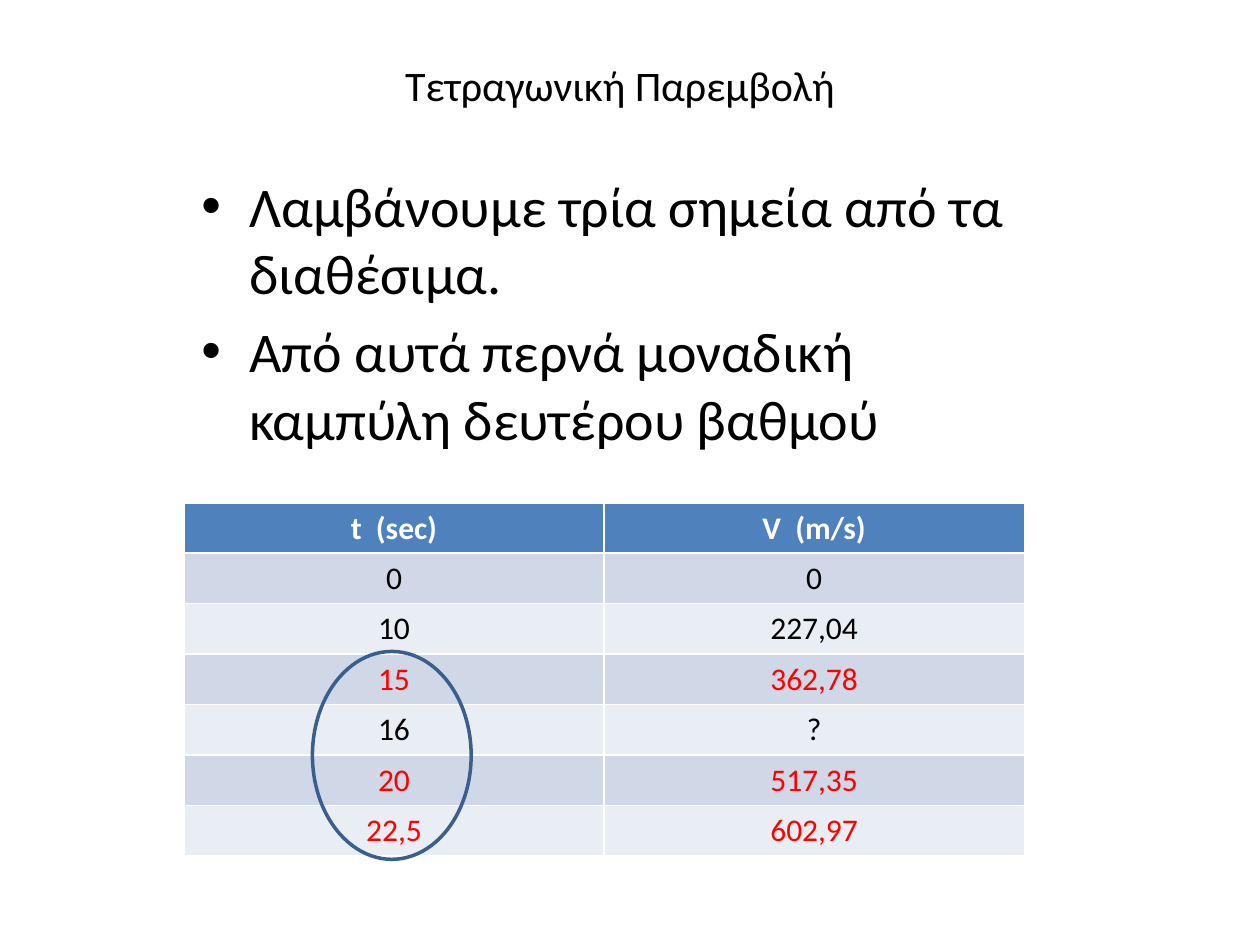
from dataclasses import dataclass

from lxml import etree
from pptx import Presentation
from pptx.dml.color import RGBColor
from pptx.enum import shapes, text
from pptx.oxml.ns import qn
from pptx.util import Inches, Pt

FONT = "Calibri"
BLACK = RGBColor(0x00, 0x00, 0x00)
WHITE = RGBColor(0xFF, 0xFF, 0xFF)
RED = RGBColor(0xFF, 0x00, 0x00)
HEADER_BLUE = RGBColor(0x4F, 0x81, 0xBD)
BAND_DARK = RGBColor(0xD0, 0xD8, 0xE8)
BAND_LIGHT = RGBColor(0xE9, 0xED, 0xF4)
RING_BLUE = RGBColor(0x3A, 0x5F, 0x8C)


@dataclass
class Measurement:
    time: str
    speed: str
    chosen: bool = False


HEADINGS = ("t  (sec)", "V  (m/s)")
MEASUREMENTS = [
    Measurement("0", "0"),
    Measurement("10", "227,04"),
    Measurement("15", "362,78", chosen=True),
    Measurement("16", "?"),
    Measurement("20", "517,35", chosen=True),
    Measurement("22,5", "602,97", chosen=True),
]
STEPS = [
    "Λαμβάνουμε τρία σημεία από τα διαθέσιμα.",
    "Από αυτά περνά μοναδική καμπύλη δευτέρου βαθμού",
]


def format_runs(paragraph, size: float, color: RGBColor, bold: bool = False) -> None:
    for run in paragraph.runs:
        run.font.name = FONT
        run.font.size = Pt(size)
        run.font.bold = bold
        run.font.color.rgb = color


def add_bullet(paragraph) -> None:
    """Give the paragraph a round bullet with a hanging indent."""
    properties = paragraph._p.get_or_add_pPr()
    properties.set("marL", str(Inches(0.38)))
    properties.set("indent", str(-Inches(0.38)))
    etree.SubElement(properties, qn("a:buFont"), typeface="Arial")
    etree.SubElement(properties, qn("a:buChar"), char="•")


def place_title(slide, wording: str) -> None:
    title = slide.shapes.title
    title.left, title.top = Inches(0.67), Inches(0.36)
    title.width, title.height = Inches(8.5), Inches(0.63)
    title.text_frame.text = wording
    title.text_frame.vertical_anchor = text.MSO_ANCHOR.MIDDLE
    heading = title.text_frame.paragraphs[0]
    heading.alignment = text.PP_ALIGN.CENTER
    format_runs(heading, 24, BLACK)


def add_steps(slide, steps: list[str]) -> None:
    body = slide.shapes.add_textbox(Inches(1.5), Inches(1.31), Inches(7), Inches(2.44))
    frame = body.text_frame
    frame.word_wrap = True
    frame.text = "\n".join(steps)
    for step in frame.paragraphs:
        step.space_before = Pt(6.4)
        add_bullet(step)
        format_runs(step, 32, BLACK)


def fill_row(row, values: tuple[str, str], fill: RGBColor, color: RGBColor,
             bold: bool = False) -> None:
    row.height = Inches(0.4)
    for cell, value in zip(row.cells, values):
        cell.fill.solid()
        cell.fill.fore_color.rgb = fill
        cell.text_frame.text = value
        paragraph = cell.text_frame.paragraphs[0]
        paragraph.alignment = text.PP_ALIGN.CENTER
        format_runs(paragraph, 18, color, bold)


def add_measurements(slide, measurements: list[Measurement]) -> None:
    table = slide.shapes.add_table(
        len(measurements) + 1, len(HEADINGS),
        Inches(1.46), Inches(3.99), Inches(6.67), Inches(2.8),
    ).table
    fill_row(table.rows[0], HEADINGS, HEADER_BLUE, WHITE, bold=True)
    for index, measurement in enumerate(measurements, start=1):
        fill_row(
            table.rows[index],
            (measurement.time, measurement.speed),
            BAND_DARK if index % 2 else BAND_LIGHT,
            RED if measurement.chosen else BLACK,
        )


def add_ring(slide) -> None:
    """Circle the times around the chosen points."""
    ring = slide.shapes.add_shape(
        shapes.MSO_SHAPE.OVAL, Inches(2.48), Inches(5.17), Inches(1.26), Inches(1.65)
    )
    ring.shadow.inherit = False
    ring.fill.background()
    ring.line.color.rgb = RING_BLUE
    ring.line.width = Pt(2)


def main() -> None:
    deck = Presentation()
    deck.slide_width, deck.slide_height = Inches(10), Inches(7.5)
    slide = deck.slides.add_slide(deck.slide_layouts.get_by_name("Title Only"))
    place_title(slide, "Τετραγωνική Παρεμβολή")
    add_steps(slide, STEPS)
    add_measurements(slide, MEASUREMENTS)
    add_ring(slide)
    deck.save("out.pptx")


if __name__ == "__main__":
    main()
